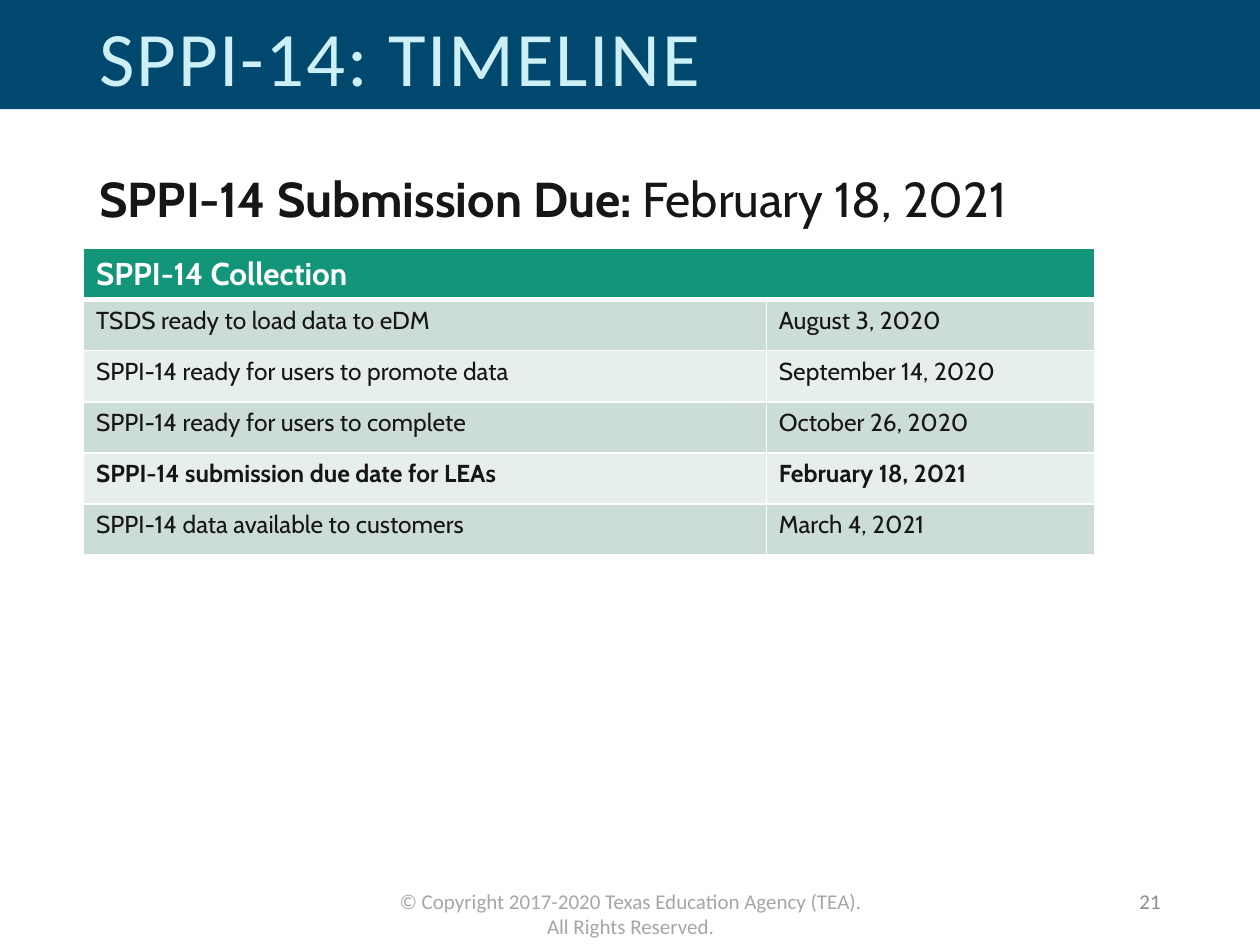
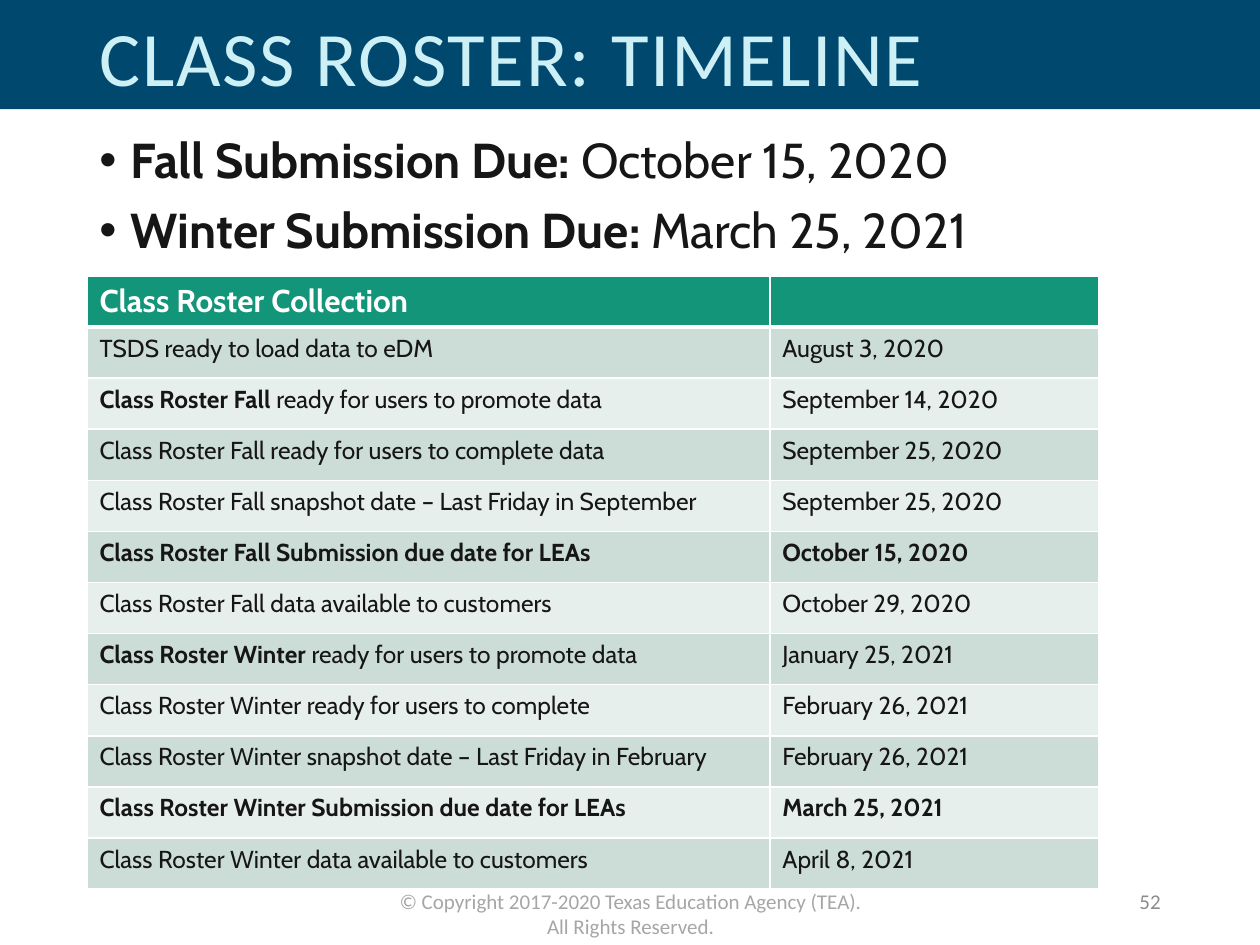
from dataclasses import dataclass
from typing import NamedTuple

from lxml.etree import SubElement
from pptx import Presentation
from pptx.dml.color import RGBColor
from pptx.enum.shapes import MSO_SHAPE
from pptx.enum.text import MSO_ANCHOR, MSO_AUTO_SIZE, PP_ALIGN
from pptx.oxml.ns import qn
from pptx.presentation import Presentation as Deck
from pptx.slide import Slide
from pptx.table import _Cell as Cell
from pptx.text.text import TextFrame, _Paragraph as Paragraph
from pptx.util import Pt


@dataclass(frozen=True)
class Theme:
    heading_font: str = "Calibri"
    body_font: str = "Cabin"
    band: str = "00486E"
    title: str = "CCF0F5"
    ink: str = "171616"
    white: str = "FFFFFF"
    header: str = "129579"
    stripes: tuple[str, str] = ("CCDDD7", "E7EFEC")
    copyright: str = "A6A6A6"
    number: str = "8C8C8C"
    title_size: float = 44
    due_size: float = 28
    header_size: float = 18
    row_size: float = 14
    footer_size: float = 12
    line_spacing: float = 0.9


THEME = Theme()
SLIDE_WIDTH, SLIDE_HEIGHT = 720, 540
COLUMN_WIDTHS = (390.2, 187.9)
ROW_HEIGHT = 29.2
COPYRIGHT = "© Copyright 2017-2020 Texas Education Agency (TEA). All Rights Reserved."


class Box(NamedTuple):
    left: float
    top: float
    width: float
    height: float


class TextStyle(NamedTuple):
    font: str
    size: float
    color: str


TITLE = TextStyle(THEME.heading_font, THEME.title_size, THEME.title)
DUE = TextStyle(THEME.body_font, THEME.due_size, THEME.ink)
HEADER = TextStyle(THEME.body_font, THEME.header_size, THEME.white)
ROW = TextStyle(THEME.body_font, THEME.row_size, THEME.ink)
FOOTER = TextStyle(THEME.heading_font, THEME.footer_size, THEME.copyright)
NUMBER = TextStyle(THEME.heading_font, THEME.footer_size, THEME.number)


class Milestone(NamedTuple):
    event: str
    date: str
    due: bool = False
    lead: str = ""


class Deadline(NamedTuple):
    label: str
    date: str


@dataclass(frozen=True)
class Timeline:
    title: str
    number: str
    deadlines: tuple[Deadline, ...]
    deadlines_box: Box
    bulleted: bool
    collection: str
    table_left: float
    table_top: float
    merged_header: bool
    milestones: tuple[Milestone, ...]


TIMELINES = (
    Timeline(
        title="SPPI-14: TIMELINE",
        number="21",
        deadlines=(Deadline("SPPI-14 Submission Due: ", "February 18, 2021"),),
        deadlines_box=Box(49.7, 96.5, 620.6, 42),
        bulleted=False,
        collection="SPPI-14 Collection",
        table_left=47.7,
        table_top=142,
        merged_header=True,
        milestones=(
            Milestone("TSDS ready to load data to eDM", "August 3, 2020"),
            Milestone("SPPI-14 ready for users to promote data", "September 14, 2020"),
            Milestone("SPPI-14 ready for users to complete", "October 26, 2020"),
            Milestone("SPPI-14 submission due date for LEAs", "February 18, 2021", due=True),
            Milestone("SPPI-14 data available to customers", "March 4, 2021"),
        ),
    ),
    Timeline(
        title="CLASS ROSTER: TIMELINE",
        number="52",
        deadlines=(
            Deadline("Fall Submission Due: ", "October 15, 2020"),
            Deadline("Winter Submission Due: ", "March 25, 2021"),
        ),
        deadlines_box=Box(49.7, 74.2, 670.3, 82),
        bulleted=True,
        collection="Class Roster Collection",
        table_left=49.7,
        table_top=157.7,
        merged_header=False,
        milestones=(
            Milestone("TSDS ready to load data to eDM", "August 3, 2020"),
            Milestone("ready for users to promote data", "September 14, 2020", lead="Class Roster Fall "),
            Milestone("Class Roster Fall ready for users to complete data", "September 25, 2020"),
            Milestone("Class Roster Fall snapshot date – Last Friday in September", "September 25, 2020"),
            Milestone("Class Roster Fall Submission due date for LEAs", "October 15, 2020", due=True),
            Milestone("Class Roster Fall data available to customers", "October 29, 2020"),
            Milestone("ready for users to promote data", "January 25, 2021", lead="Class Roster Winter "),
            Milestone("Class Roster Winter ready for users to complete", "February 26, 2021"),
            Milestone("Class Roster Winter snapshot date – Last Friday in February", "February 26, 2021"),
            Milestone("Class Roster Winter Submission due date for LEAs", "March 25, 2021", due=True),
            Milestone("Class Roster Winter data available to customers", "April 8, 2021"),
        ),
    ),
)


def points(box: Box) -> tuple[Pt, ...]:
    return tuple(Pt(length) for length in box)


def style_paragraph(paragraph: Paragraph, style: TextStyle, bold: bool | None = False) -> None:
    font = paragraph.font
    font.name, font.size, font.bold = style.font, Pt(style.size), bold
    font.color.rgb = RGBColor.from_string(style.color)


def write_lead(paragraph: Paragraph, lead: str, rest: str, style: TextStyle) -> None:
    for words, bold in ((lead, True), (rest, False)):
        run = paragraph.add_run()
        run.text, run.font.bold = words, bold
    style_paragraph(paragraph, style, bold=None)


def add_text_frame(slide: Slide, box: Box) -> TextFrame:
    frame = slide.shapes.add_textbox(*points(box)).text_frame
    frame.word_wrap = True
    return frame


def add_bullet(paragraph: Paragraph) -> None:
    properties = paragraph._p.get_or_add_pPr()
    properties.set("marL", str(Pt(18)))
    properties.set("indent", str(-Pt(18)))
    SubElement(properties, qn("a:buFont")).set("typeface", "Arial")
    SubElement(properties, qn("a:buChar")).set("char", "•")


def add_title(slide: Slide, words: str) -> None:
    title = slide.shapes.title
    title.left, title.top, title.width, title.height = points(Box(49.7, 3.6, 576, 62.6))
    band = slide.shapes.add_shape(MSO_SHAPE.RECTANGLE, *points(Box(0, 0, SLIDE_WIDTH, 62.4)))
    band.shadow.inherit = False
    band.fill.solid()
    band.fill.fore_color.rgb = RGBColor.from_string(THEME.band)
    band.line.fill.background()
    title.element.addprevious(band.element)

    frame = title.text_frame
    frame.text = words
    frame.word_wrap = True
    frame.auto_size = MSO_AUTO_SIZE.NONE
    frame.vertical_anchor = MSO_ANCHOR.MIDDLE
    heading = frame.paragraphs[0]
    heading.alignment = PP_ALIGN.LEFT
    heading.line_spacing = THEME.line_spacing
    heading.runs[0]._r.get_or_add_rPr().set("spc", "100")
    style_paragraph(heading, TITLE)


def add_footer(slide: Slide, number: str) -> None:
    notices = (
        (COPYRIGHT, Box(218.9, 504, 283, 36), FOOTER, PP_ALIGN.CENTER, MSO_ANCHOR.TOP),
        (number, Box(508.3, 500.4, 162, 28.8), NUMBER, PP_ALIGN.RIGHT, MSO_ANCHOR.MIDDLE),
    )
    for words, box, style, alignment, anchor in notices:
        frame = add_text_frame(slide, box)
        frame.text = words
        frame.vertical_anchor = anchor
        frame.paragraphs[0].alignment = alignment
        style_paragraph(frame.paragraphs[0], style)


def add_deadlines(slide: Slide, timeline: Timeline) -> None:
    frame = add_text_frame(slide, timeline.deadlines_box)
    for position, deadline in enumerate(timeline.deadlines):
        paragraph = frame.add_paragraph() if position else frame.paragraphs[0]
        paragraph.line_spacing = THEME.line_spacing
        if position:
            paragraph.space_before = Pt(10)
        if timeline.bulleted:
            add_bullet(paragraph)
        write_lead(paragraph, deadline.label, deadline.date, DUE)


def format_cell(cell: Cell, color: str, top: float = 1, bottom: float = 1) -> None:
    properties = cell._tc.get_or_add_tcPr()
    for side, width in (("L", 1), ("R", 1), ("T", top), ("B", bottom)):
        border = SubElement(properties, qn(f"a:ln{side}"), w=str(Pt(width)))
        paint = SubElement(border, qn("a:solidFill"))
        SubElement(paint, qn("a:srgbClr"), val=THEME.white)
    cell.fill.solid()
    cell.fill.fore_color.rgb = RGBColor.from_string(color)


def add_milestones(slide: Slide, timeline: Timeline) -> None:
    row_count = len(timeline.milestones) + 1
    box = Box(timeline.table_left, timeline.table_top, sum(COLUMN_WIDTHS), row_count * ROW_HEIGHT)
    table = slide.shapes.add_table(row_count, len(COLUMN_WIDTHS), *points(box)).table
    table.horz_banding = False
    for column, width in zip(table.columns, COLUMN_WIDTHS):
        column.width = Pt(width)
    for row in table.rows:
        row.height = Pt(ROW_HEIGHT)

    collection, header_end = table.cell(0, 0), table.cell(0, 1)
    for cell in (collection, header_end):
        format_cell(cell, THEME.header, bottom=3)
    if timeline.merged_header:
        collection.merge(header_end)
    collection.text = timeline.collection
    for cell in (collection, header_end):
        style_paragraph(cell.text_frame.paragraphs[0], HEADER, bold=True)

    for index, milestone in enumerate(timeline.milestones):
        event, date = table.cell(index + 1, 0), table.cell(index + 1, 1)
        for cell in (event, date):
            format_cell(cell, THEME.stripes[index % 2], top=1 if index else 3)
        date.text = milestone.date
        style_paragraph(date.text_frame.paragraphs[0], ROW, milestone.due)
        if milestone.lead:
            write_lead(event.text_frame.paragraphs[0], milestone.lead, milestone.event, ROW)
        else:
            event.text = milestone.event
            style_paragraph(event.text_frame.paragraphs[0], ROW, milestone.due)


def add_timeline(deck: Deck, timeline: Timeline) -> None:
    slide = deck.slides.add_slide(deck.slide_layouts.get_by_name("Title Only"))
    add_title(slide, timeline.title)
    add_footer(slide, timeline.number)
    add_deadlines(slide, timeline)
    add_milestones(slide, timeline)


def main() -> None:
    deck = Presentation()
    deck.slide_width, deck.slide_height = Pt(SLIDE_WIDTH), Pt(SLIDE_HEIGHT)
    for timeline in TIMELINES:
        add_timeline(deck, timeline)
    deck.save("out.pptx")


if __name__ == "__main__":
    main()
